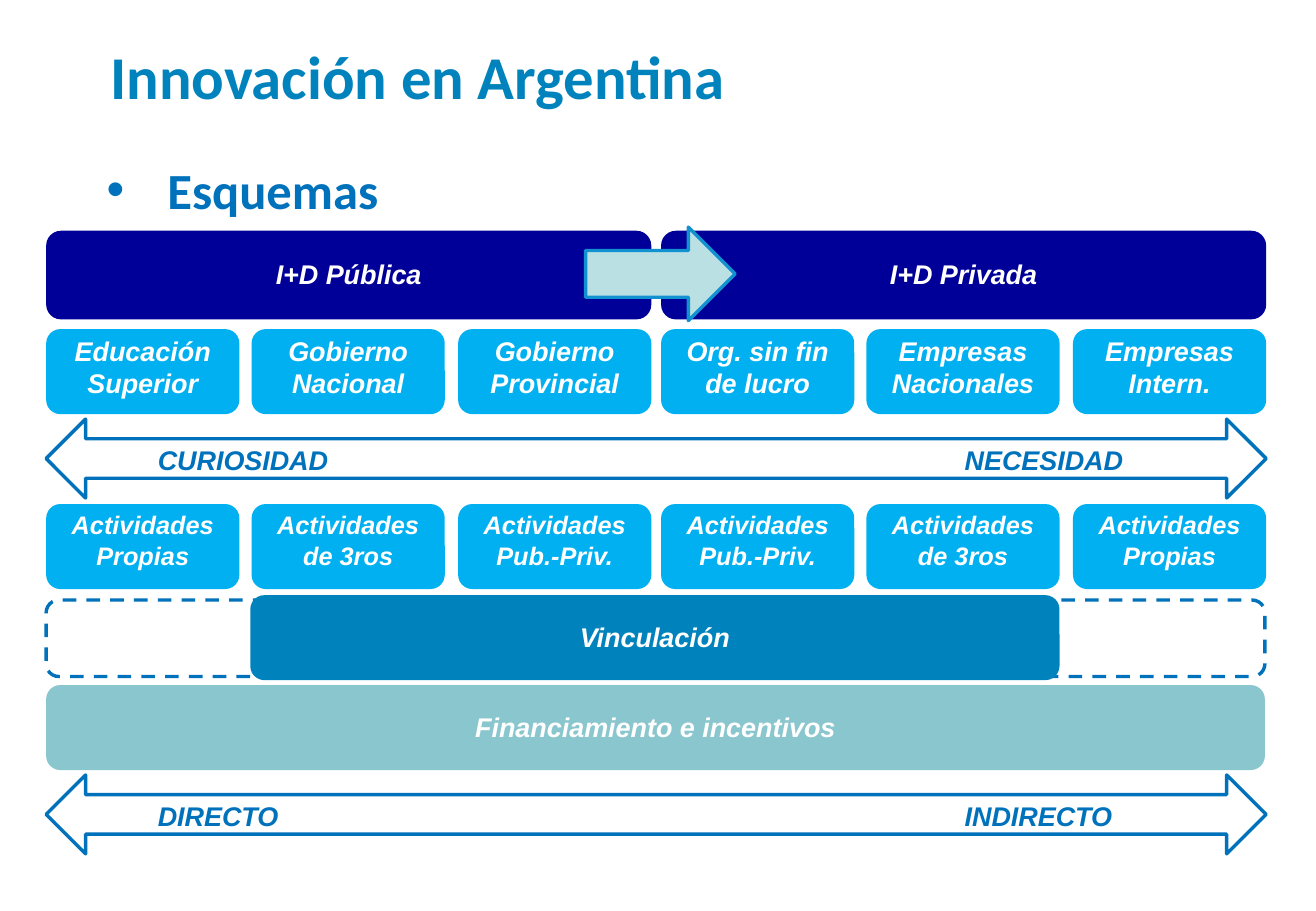
from lxml.etree import SubElement
from pptx import Presentation
from pptx.dml.color import RGBColor
from pptx.enum.dml import MSO_LINE
from pptx.enum.shapes import MSO_SHAPE
from pptx.enum.text import MSO_ANCHOR, PP_ALIGN
from pptx.oxml.ns import qn
from pptx.util import Pt

PX = 9144  # 100 px to the inch
LEFT, FULL_WIDTH = 38, 1003
SIDE_STEP = 506  # from the public half to the private half
BOX_WIDTH, BOX_HEIGHT = 159, 70

NAVY, SKY, BLUE, TEAL = "000099", "00B0F0", "0083BC", "8AC6CD"
OUTLINE, WHITE = "0072BC", "FFFFFF"

LABEL = {"name": "Arial", "size": Pt(16), "bold": True, "italic": True}
ACTIVITY = {**LABEL, "size": Pt(15)}
TITLE = {"name": "Calibri", "size": Pt(36), "bold": True}
BULLET = {**TITLE, "size": Pt(30)}

SECTORS = ["Educación Superior", "Gobierno Nacional", "Gobierno Provincial",
           "Org. sin fin de lucro", "Empresas Nacionales", "Empresas Intern."]
ACTIVITIES = ["Actividades Propias", "Actividades de 3ros", "Actividades Pub.-Priv.",
              "Actividades Pub.-Priv.", "Actividades de 3ros", "Actividades Propias"]


def px(*lengths):
    return [length * PX for length in lengths]


def rgb(color):
    return RGBColor.from_string(color)


def write(paragraph, text, font_format, color):
    run = paragraph.add_run()
    run.text = text
    for attribute, value in font_format.items():
        setattr(run.font, attribute, value)
    run.font.color.rgb = rgb(color)


def add_text(slide, box, text, font_format, color):
    frame = slide.shapes.add_textbox(*px(*box)).text_frame
    frame.word_wrap = True
    paragraph = frame.paragraphs[0]
    write(paragraph, text, font_format, color)
    return paragraph


def add_bullet(slide, box, text):
    paragraph = add_text(slide, box, text, BULLET, OUTLINE)
    properties = paragraph._p.get_or_add_pPr()
    properties.set("marL", str(50 * PX))
    properties.set("indent", str(-50 * PX))
    color = SubElement(SubElement(properties, qn("a:buClr")), qn("a:srgbClr"))
    color.set("val", OUTLINE)
    SubElement(properties, qn("a:buFont")).set("typeface", "Arial")
    SubElement(properties, qn("a:buChar")).set("char", "•")


def add_figure(slide, preset, box, fill=None, line=None):
    figure = slide.shapes.add_shape(preset, *px(*box))
    figure.shadow.inherit = False
    if fill:
        figure.fill.solid()
        figure.fill.fore_color.rgb = rgb(fill)
    else:
        figure.fill.background()
    if line:
        figure.line.color.rgb = rgb(line)
        figure.line.width = Pt(2)
    else:
        figure.line.fill.background()
    return figure


def add_block(slide, box, text, fill, font_format=LABEL, anchor=MSO_ANCHOR.MIDDLE):
    block = add_figure(slide, MSO_SHAPE.ROUNDED_RECTANGLE, box, fill)
    frame = block.text_frame
    frame_format = {"word_wrap": True, "vertical_anchor": anchor,
                    "margin_left": 14 * PX, "margin_right": 14 * PX,
                    "margin_top": 1 * PX, "margin_bottom": 3 * PX}
    for attribute, value in frame_format.items():
        setattr(frame, attribute, value)
    frame.paragraphs[0].alignment = PP_ALIGN.CENTER
    write(frame.paragraphs[0], text, font_format, WHITE)


def add_row(slide, top, names, font_format):
    """Six boxes, three under each half."""
    for index, name in enumerate(names):
        side, column = divmod(index, 3)
        left = LEFT + side * SIDE_STEP + column * 339 // 2
        add_block(slide, (left, top, BOX_WIDTH, BOX_HEIGHT), name, SKY,
                  font_format, MSO_ANCHOR.TOP)


def add_axis(slide, top, start, end):
    """Double arrow with a word near each end."""
    for left, word in ((120, start), (784, end)):
        add_text(slide, (left, top + 15, 165, 37), word, LABEL, OUTLINE)
    add_figure(slide, MSO_SHAPE.LEFT_RIGHT_ARROW, (LEFT, top, FULL_WIDTH + 1, 65),
               line=OUTLINE)


def main():
    presentation = Presentation()
    presentation.slide_width, presentation.slide_height = px(1083, 750)
    slide = presentation.slides.add_slide(presentation.slide_layouts[6])

    add_text(slide, (81, 27, 657, 71), "Innovación en Argentina", TITLE, BLUE)
    add_bullet(slide, (78, 126, 914, 61), "Esquemas")

    for side, sector in enumerate(("I+D Pública", "I+D Privada")):
        add_block(slide, (LEFT + side * SIDE_STEP, 190, 498, 73), sector, NAVY)
    add_figure(slide, MSO_SHAPE.RIGHT_ARROW, (482, 187, 123, 77), "BBE0E3", "1291D0")

    add_row(slide, 271, SECTORS, LABEL)
    add_axis(slide, 345, "CURIOSIDAD", "NECESIDAD")
    add_row(slide, 415, ACTIVITIES, ACTIVITY)

    reach = add_figure(slide, MSO_SHAPE.ROUNDED_RECTANGLE, (LEFT, 494, FULL_WIDTH, 63),
                       line=OUTLINE)
    reach.line.dash_style = MSO_LINE.DASH
    add_block(slide, (206, 490, 666, BOX_HEIGHT), "Vinculación", BLUE)
    add_block(slide, (LEFT, 564, FULL_WIDTH, BOX_HEIGHT), "Financiamiento e incentivos", TEAL)
    add_axis(slide, 638, "DIRECTO", "INDIRECTO")

    presentation.save("out.pptx")


if __name__ == "__main__":
    main()
